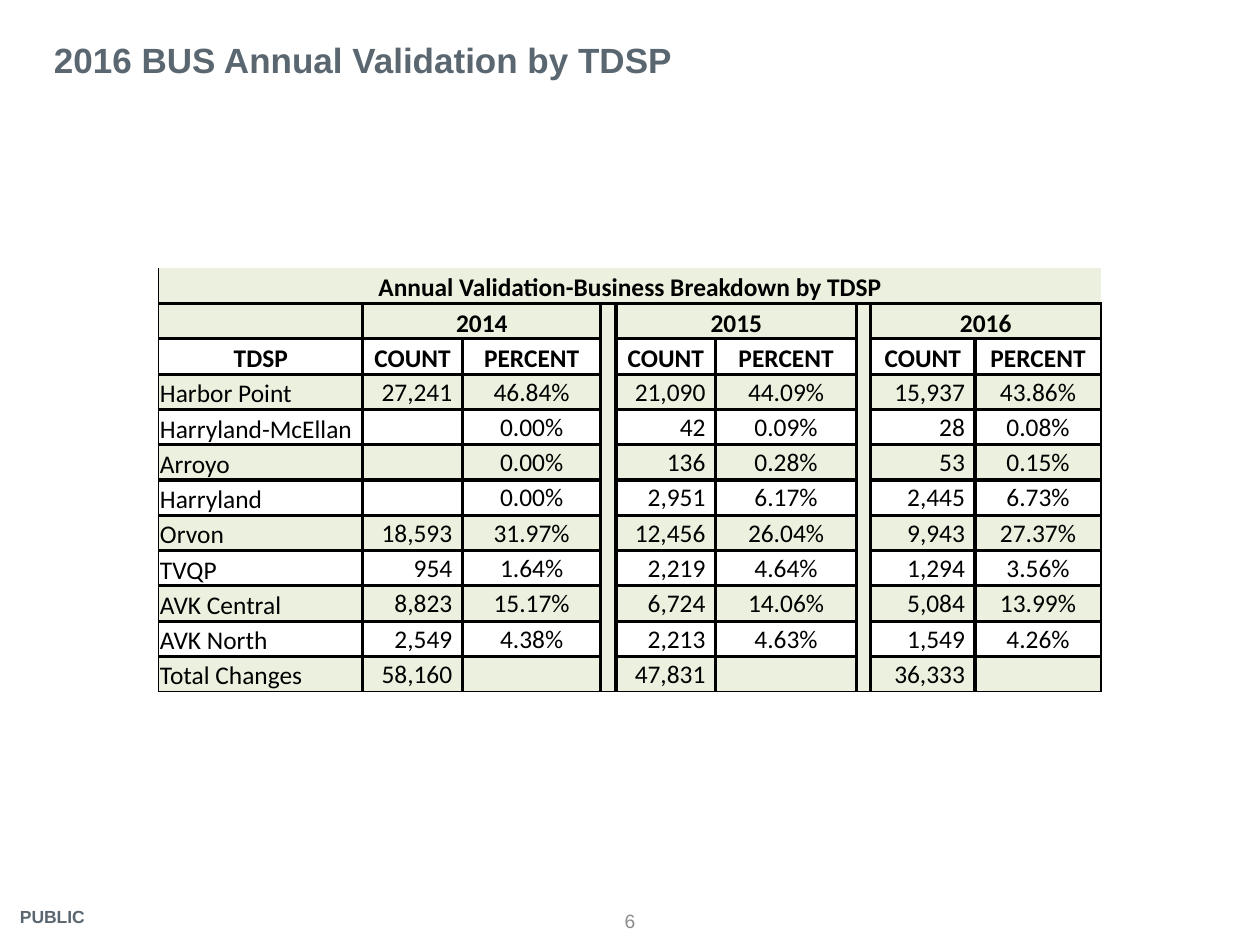
import pptx
import pptx.util
import pptx.dml.color
import pptx.enum.text
import lxml.etree

Inches = pptx.util.Inches
Align = pptx.enum.text.PP_ALIGN
Anchor = pptx.enum.text.MSO_ANCHOR

THEME = dict(
    slate="5B6770", gray="8C8C8C", ink="000000", band="EBF1DE", plain="FFFFFF",
    head="Arial", body="Calibri",
    title=20, cell=14.5, page=11, foot=10, thick=2, thin=1,
)

TITLE = "2016 BUS Annual Validation by TDSP"
CAPTION = "Annual Validation-Business Breakdown by TDSP"
YEARS = ["2014", "2015", "2016"]
HEADS = ["TDSP"] + ["COUNT", "PERCENT"] * len(YEARS)
ROWS = [
    ("Harbor Point", "27,241", "46.84%", "21,090", "44.09%", "15,937", "43.86%"),
    ("Harryland-McEllan", "", "0.00%", "42", "0.09%", "28", "0.08%"),
    ("Arroyo", "", "0.00%", "136", "0.28%", "53", "0.15%"),
    ("Harryland", "", "0.00%", "2,951", "6.17%", "2,445", "6.73%"),
    ("Orvon", "18,593", "31.97%", "12,456", "26.04%", "9,943", "27.37%"),
    ("TVQP", "954", "1.64%", "2,219", "4.64%", "1,294", "3.56%"),
    ("AVK Central", "8,823", "15.17%", "6,724", "14.06%", "5,084", "13.99%"),
    ("AVK North", "2,549", "4.38%", "2,213", "4.63%", "1,549", "4.26%"),
    ("Total Changes", "58,160", "", "47,831", "", "36,333", ""),
]
WIDTHS = [1.62, 0.79, 1.1, 0.12, 0.79, 1.12, 0.11, 0.83, 1]
HEIGHT = 0.28
GAPS = (3, 6)
COUNTS = (1, 4, 7)


def color(name):
    return pptx.dml.color.RGBColor.from_string(THEME[name])


def write(frame, text, size, face, ink, bold=False, align=Align.LEFT):
    par = frame.paragraphs[0]
    par.alignment = align
    if not text:
        # An empty cell still needs its type size, or its row grows.
        end = lxml.etree.SubElement(par._p, pptx.oxml.ns.qn("a:endParaRPr"))
        end.set("sz", str(int(THEME[size] * 100)))
        return
    run = par.add_run()
    run.text = text
    font = run.font
    font.size = pptx.util.Pt(THEME[size])
    font.name = THEME[face]
    font.bold = bold
    font.color.rgb = color(ink)


def label(slide, text, left, top, width, height, anchor=Anchor.TOP, **style):
    box = slide.shapes.add_textbox(*map(Inches, (left, top, width, height)))
    box.text_frame.word_wrap = True
    box.text_frame.vertical_anchor = anchor
    write(box.text_frame, text, **style)


def border(cell, **sides):
    """Draw the sides L, R, T, B at a theme width; None hides a side."""
    props = cell._tc.get_or_add_tcPr()
    for side in "LRTB":
        width = sides[side]
        line = lxml.etree.SubElement(props, pptx.oxml.ns.qn(f"a:ln{side}"))
        if width is None:
            line.set("w", "0")
            lxml.etree.SubElement(line, pptx.oxml.ns.qn("a:noFill"))
            continue
        line.set("w", str(pptx.util.Pt(THEME[width])))
        fill = lxml.etree.SubElement(line, pptx.oxml.ns.qn("a:solidFill"))
        tint = lxml.etree.SubElement(fill, pptx.oxml.ns.qn("a:srgbClr"))
        tint.set("val", THEME["ink"])


def edges(row, col, last):
    """Return the border widths for a place in the grid."""
    end = len(WIDTHS) - 1
    if row == 0:
        return dict(L="thin" if col == 0 else None, R=None, T=None, B="thick")
    gap = col in GAPS
    # The last year's heading spans the final two columns.
    outer = col == end or (row == 1 and col == COUNTS[-1])
    return dict(
        L="thin" if col == 0 else "thick",
        R="thin" if outer else "thick",
        T=None if gap and row > 1 else "thick",
        B="thin" if row == last else None if gap else "thick",
    )


def spread(row):
    """Insert the empty gap columns between the years."""
    return [row[0], *row[1:3], "", *row[3:5], "", *row[5:7]]


def grid(slide):
    years = [""]
    for year in YEARS:
        years += [year, ""]
    blank = [""] * (len(WIDTHS) - 1)
    lines = [[CAPTION, *blank], spread(years), spread(HEADS)]
    lines += [spread(row) for row in ROWS]
    last = len(lines) - 1
    frame = slide.shapes.add_table(
        len(lines), len(WIDTHS), Inches(1.26), Inches(2.13),
        Inches(sum(WIDTHS)), Inches(HEIGHT * len(lines)))
    table = frame.table
    table.first_row = table.horz_banding = False
    for col, width in zip(table.columns, WIDTHS):
        col.width = Inches(width)
    for r, line in enumerate(lines):
        table.rows[r].height = Inches(HEIGHT)
        head = r < 3
        for c, text in enumerate(line):
            cell = table.cell(r, c)
            count = not head and c in COUNTS
            cell.margin_left = cell.margin_top = Inches(0.01)
            cell.margin_right = Inches(0.08 if count else 0.01)
            cell.margin_bottom = 0
            low = head or c == 0
            cell.vertical_anchor = Anchor.BOTTOM if low else Anchor.MIDDLE
            border(cell, **edges(r, c, last))
            cell.fill.solid()
            band = r == 0 or r % 2 == 1 or c in GAPS
            cell.fill.fore_color.rgb = color("band" if band else "plain")
            align = Align.RIGHT if count else Align.CENTER
            if c == 0 and not head:
                align = Align.LEFT
            write(cell.text_frame, text, "cell", "body", "ink", head, align)
    table.cell(0, 0).merge(table.cell(0, len(WIDTHS) - 1))
    for c in COUNTS:
        table.cell(1, c).merge(table.cell(1, c + 1))


def main():
    deck = pptx.Presentation()
    deck.slide_width, deck.slide_height = Inches(10), Inches(7.5)
    slide = deck.slides.add_slide(deck.slide_layouts[6])
    label(slide, "PUBLIC", 0.06, 7.14, 0.77, 0.28,
          size="foot", face="head", ink="slate", bold=True)
    label(slide, TITLE, 0.33, 0.26, 9.17, 0.57,
          size="title", face="head", ink="slate", bold=True)
    grid(slide)
    label(slide, "6", 4.75, 7.19, 0.5, 0.23, Anchor.MIDDLE,
          size="page", face="head", ink="gray", align=Align.CENTER)
    deck.save("out.pptx")


if __name__ == "__main__":
    main()
